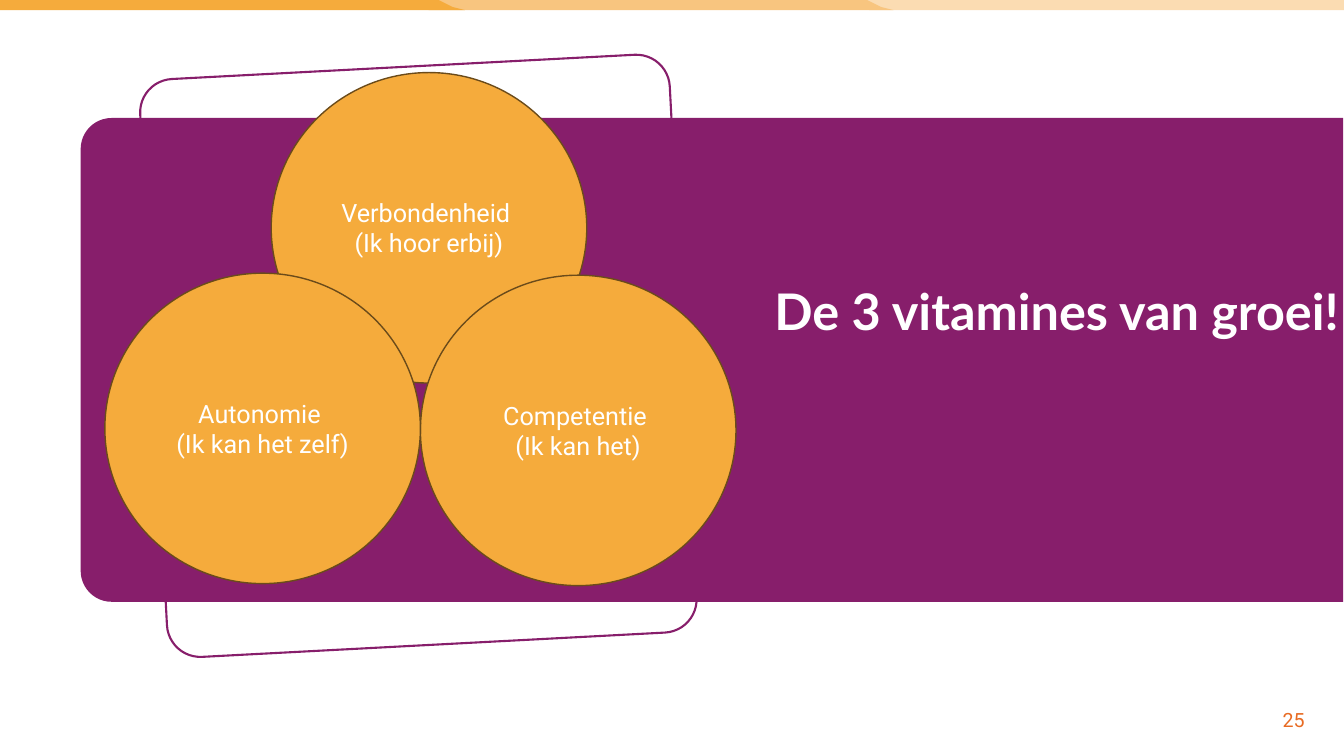
import pptx
import pptx.dml.color
import pptx.enum.shapes
import pptx.enum.text
import pptx.util

COLOURS = {
    "purple": "871E6B", "orange": "F5AB3C", "light_orange": "F8C57F",
    "pale_orange": "FBDCB2", "brown": "6B4B1A", "number": "E86B23", "white": "FFFFFF",
}
SLIDE_WIDTH, SLIDE_HEIGHT = 13.33, 7.5
BAND_HEIGHT = 0.1
SHAPES = pptx.enum.shapes.MSO_SHAPE
ANCHORS = pptx.enum.text.MSO_ANCHOR
CENTER = pptx.enum.text.PP_ALIGN.CENTER


def colour(name):
    """Return the named colour of the palette."""
    return pptx.dml.color.RGBColor.from_string(COLOURS[name])


def inches(*lengths):
    """Convert lengths in inches to a list of slide units."""
    return [pptx.util.Inches(length) for length in lengths]


def paint(shape, fill=None, line=None, line_width=1):
    """Give a shape its fill and outline, without a shadow."""
    shape.shadow.inherit = False
    if fill:
        shape.fill.solid()
        shape.fill.fore_color.rgb = colour(fill)
    else:
        shape.fill.background()
    if line:
        shape.line.color.rgb = colour(line)
        shape.line.width = pptx.util.Pt(line_width)
    else:
        shape.line.fill.background()


def write(shape, lines, size, font, text_colour, alignment=None, bold=False):
    """Write one paragraph per line and format its runs."""
    frame = shape.text_frame
    frame.word_wrap = True
    frame.text = "\n".join(lines)
    for paragraph in frame.paragraphs:
        paragraph.alignment = alignment
        for run in paragraph.runs:
            run.font.size = pptx.util.Pt(size)
            run.font.name = font
            run.font.bold = bold
            run.font.color.rgb = colour(text_colour)


def add_header_bands(slide):
    """Draw the three overlapping bands along the top edge."""
    slant = [(0, 0), (0.02, 0.01), (0.08, 0.04), (0.14, 0.07), (0.26, BAND_HEIGHT)]
    tail = [(0, 0), (0.13, 0.04), (0.22, 0.07), (0.27, 0.09), (0.28, BAND_HEIGHT)]
    bands = [
        ("pale_orange", SLIDE_WIDTH, 8.34, tail),
        ("light_orange", 4.25, 8.6, slant),
        ("orange", 0, 4.35, slant),
    ]
    for fill, straight_edge, curve_start, curve in bands:
        points = [inches(curve_start + x, y) for x, y in curve]
        points.append(inches(straight_edge, BAND_HEIGHT))
        builder = slide.shapes.build_freeform(*inches(straight_edge, 0))
        builder.add_line_segments(points)
        paint(builder.convert_to_shape(), fill)


def add_panel(slide, left, top, width, height):
    """Draw the purple panel with its rounded left side and the tilted frame."""
    turned_left = left + (width - height) / 2
    turned_top = top + (height - width) / 2
    panel = slide.shapes.add_shape(
        SHAPES.ROUND_2_SAME_RECTANGLE, *inches(turned_left, turned_top, height, width))
    panel.rotation = 270
    panel.adjustments[0] = 0.064
    panel.adjustments[1] = 0
    paint(panel, "purple")

    frame = slide.shapes.add_shape(
        SHAPES.ROUNDED_RECTANGLE, *inches(left + 0.72, top - 0.51, 5.26, 5.74))
    frame.rotation = 357
    frame.adjustments[0] = 0.063
    paint(frame, line="purple", line_width=1.5)


def add_title(slide, left, top, width, height):
    """Place the title in front of the panel."""
    title = slide.shapes.title
    title.left, title.top, title.width, title.height = inches(left, top, width, height)
    title.text_frame.vertical_anchor = ANCHORS.TOP
    title.text_frame.auto_size = pptx.enum.text.MSO_AUTO_SIZE.NONE
    write(title, ["De 3 vitamines van groei!"], 36, "Lato", "white",
          pptx.enum.text.PP_ALIGN.LEFT, bold=True)
    title.element.getparent().append(title.element)


def add_vitamin_circles(slide, left, top, width, height):
    """Draw the three overlapping circles from the top left of their group."""
    vitamins = [
        (1.65, 0, ["Verbondenheid ", "(Ik hoor erbij)"]),
        (width, 2.01, ["Competentie ", "(Ik kan het)"]),
        (0, 1.99, ["Autonomie ", "(Ik kan het zelf)"]),
    ]
    for across, down, lines in vitamins:
        circle = slide.shapes.add_shape(
            SHAPES.OVAL, *inches(left + across, top + down, width, height))
        paint(circle, "orange", "brown")
        circle.text_frame.vertical_anchor = ANCHORS.MIDDLE
        write(circle, lines, 18, "Roboto", "white", CENTER)


def add_slide_number(slide, left, top, width, height):
    """Write the slide number."""
    box = slide.shapes.add_textbox(*inches(left, top, width, height))
    write(box, ["25"], 14, "Roboto", "number", CENTER)


def main():
    """Build and save the presentation."""
    presentation = pptx.Presentation()
    presentation.slide_width, presentation.slide_height = inches(SLIDE_WIDTH, SLIDE_HEIGHT)
    slide = presentation.slides.add_slide(presentation.slide_layouts.get_by_name("Title Only"))
    add_header_bands(slide)
    add_slide_number(slide, 12.56, 6.97, 0.54, 0.34)
    add_panel(slide, 0.8, 1.17, 12.52, 4.8)
    add_title(slide, 7.58, 2.73, 5.92, 1.31)
    add_vitamin_circles(slide, 1.04, 0.72, 3.13, 3.08)
    presentation.save("out.pptx")


if __name__ == "__main__":
    main()
